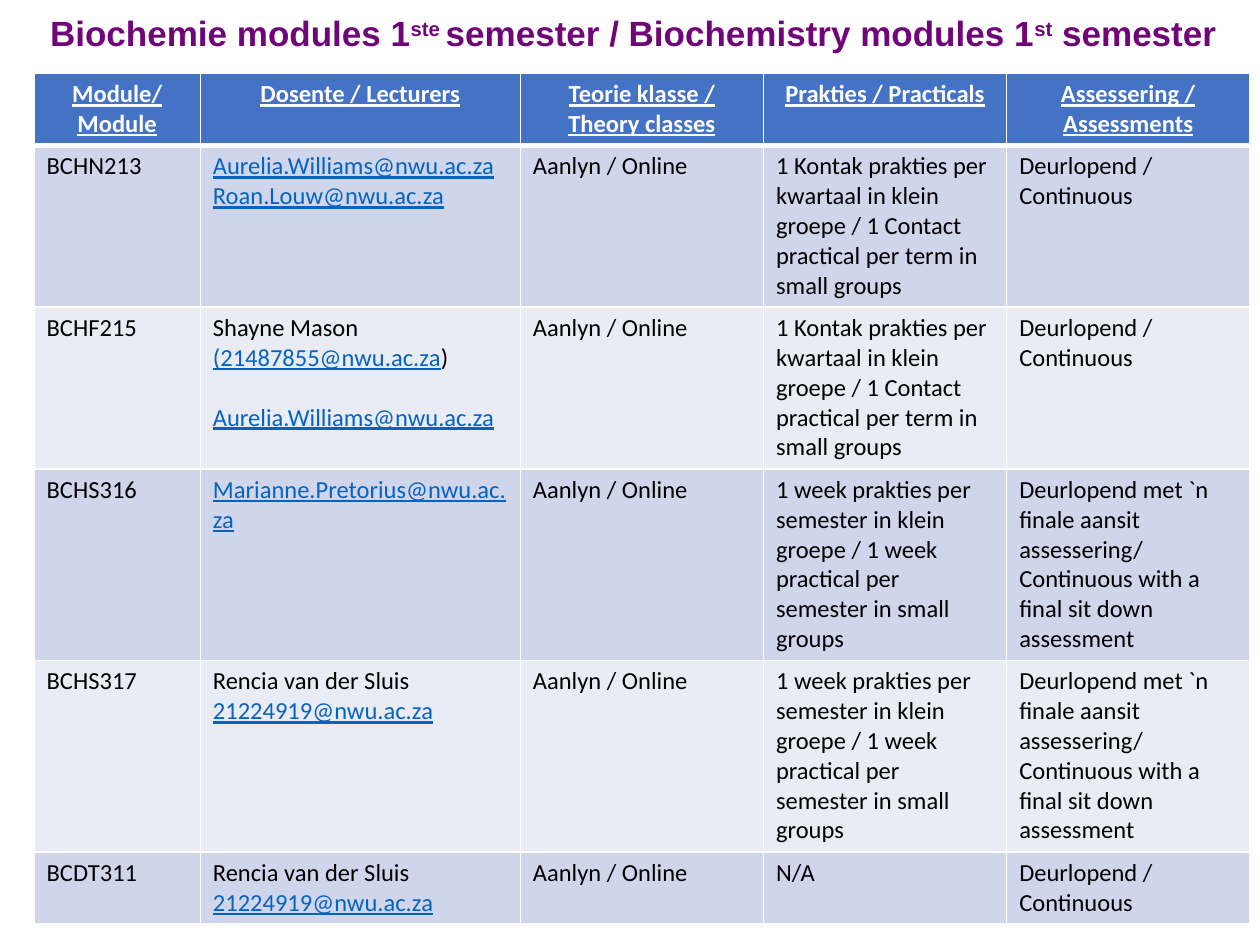
from lxml import etree
from pptx import Presentation
from pptx.dml.color import RGBColor
from pptx.enum import text
from pptx.oxml import ns
from pptx.util import Inches, Pt

PURPLE = RGBColor(0x6F, 0x05, 0x79)
BLUE = RGBColor(0x44, 0x72, 0xC4)
BAND_DARK = RGBColor(0xCF, 0xD5, 0xEA)
BAND_LIGHT = RGBColor(0xE9, 0xEB, 0xF5)
LINK = RGBColor(0x05, 0x63, 0xC1)
BLACK = RGBColor(0, 0, 0)
WHITE = RGBColor(0xFF, 0xFF, 0xFF)

ONLINE = "Aanlyn / Online"
CONTINUOUS = "Deurlopend / Continuous"
FINAL = ("Deurlopend met `n finale aansit assessering/ "
         "Continuous with a final sit down assessment")
PER_TERM = ("1 Kontak prakties per kwartaal in klein groepe / "
            "1 Contact practical per term in small groups")
ONE_WEEK = ("1 week prakties per semester in klein groepe / "
            "1 week practical per semester in small groups")
VAN_DER_SLUIS = [["Rencia van der Sluis"], ["21224919@nwu.ac.za"]]

TITLE = ["Biochemie modules 1", "ste ", "semester / Biochemistry modules 1",
         "st", " semester"]
HEADINGS = ["Module/ Module", "Dosente / Lecturers",
            "Teorie klasse / Theory classes", "Prakties / Practicals",
            "Assessering / Assessments"]
# Module, lecturers (paragraphs of runs), practicals, assessments
MODULES = [
    ("BCHN213", [["Aurelia.Williams@nwu.ac.za"], ["Roan.Louw@nwu.ac.za"]],
     PER_TERM, CONTINUOUS),
    ("BCHF215", [["Shayne Mason"], ["(21487855@nwu.ac.za", ")"],
                 ["Aurelia.Williams@nwu.ac.za"]],
     PER_TERM, CONTINUOUS),
    ("BCHS316", [["Marianne.Pretorius@nwu.ac.za"]], ONE_WEEK, FINAL),
    ("BCHS317", VAN_DER_SLUIS, ONE_WEEK, FINAL),
    ("BCDT311", VAN_DER_SLUIS, "N/A", CONTINUOUS),
]


def write(frame, paragraphs, size=14, font="Calibri", color=BLACK, bold=False,
          underline=False, align=text.PP_ALIGN.LEFT, spacing=None, raised=()):
    """Fill a frame with paragraphs of runs; e-mail addresses look like links."""
    for i, runs in enumerate(paragraphs):
        paragraph = frame.paragraphs[0] if i == 0 else frame.add_paragraph()
        paragraph.alignment = align
        if spacing:
            paragraph.line_spacing = spacing
        for words in runs:
            run = paragraph.add_run()
            run.text = words
            is_link = "@" in words
            run.font.name, run.font.size, run.font.bold = font, Pt(size), bold
            run.font.underline = underline or is_link
            run.font.color.rgb = LINK if is_link else color
            if words in raised:
                run._r.get_or_add_rPr().set("baseline", "30000")


def set_borders(cell, bottom=1):
    """Draw white lines around a cell."""
    properties = cell._tc.get_or_add_tcPr()
    sides = {"lnL": 1, "lnR": 1, "lnT": 1, "lnB": bottom}
    for i, (side, width) in enumerate(sides.items()):
        line = etree.Element(ns.qn("a:" + side), w=str(Pt(width)))
        fill = etree.SubElement(line, ns.qn("a:solidFill"))
        etree.SubElement(fill, ns.qn("a:srgbClr"), val=str(WHITE))
        properties.insert(i, line)


def add_title(slide, left, top, width, height):
    title = slide.shapes.title
    title.left, title.top, title.width, title.height = left, top, width, height
    frame = title.text_frame
    frame.word_wrap = True
    frame.auto_size = text.MSO_AUTO_SIZE.NONE
    frame.vertical_anchor = text.MSO_ANCHOR.TOP
    write(frame, [TITLE], size=20, font="Arial", color=PURPLE, bold=True,
          align=text.PP_ALIGN.CENTER, spacing=0.9, raised=("ste ", "st"))


def add_module_table(slide, left, top, width, height):
    holder = slide.shapes.add_table(len(MODULES) + 1, len(HEADINGS),
                                    left, top, width, height)
    table = holder.table
    for column, inches in zip(table.columns, [1.32, 2.54, 1.93, 1.93, 1.93]):
        column.width = Inches(inches)
    # Rows grow with their text
    for row in table.rows:
        row.height = Inches(0.41)
    holder.height = height

    # Header row
    for cell, heading in zip(table.rows[0].cells, HEADINGS):
        cell.fill.solid()
        cell.fill.fore_color.rgb = BLUE
        set_borders(cell, bottom=3)
        write(cell.text_frame, [[heading]], color=WHITE, bold=True,
              underline=True, align=text.PP_ALIGN.CENTER)

    # Module rows in alternating bands
    for r, (module, lecturers, practicals, assessments) in enumerate(MODULES, 1):
        contents = [[[module]], lecturers, [[ONLINE]], [[practicals]],
                    [[assessments]]]
        for cell, paragraphs in zip(table.rows[r].cells, contents):
            cell.fill.solid()
            cell.fill.fore_color.rgb = BAND_DARK if r % 2 else BAND_LIGHT
            set_borders(cell)
            write(cell.text_frame, paragraphs)

    # Set the second lecturer of BCHF215 apart
    table.cell(2, 1).text_frame.paragraphs[-1].space_before = Pt(17)


def main():
    deck = Presentation()
    deck.slide_width, deck.slide_height = Inches(10), Inches(7.5)
    slide = deck.slides.add_slide(deck.slide_layouts[5])
    add_title(slide, Inches(0.12), Inches(0.08), Inches(9.81), Inches(0.98))
    add_module_table(slide, Inches(0.27), Inches(0.58), Inches(9.65), Inches(6.67))
    deck.save("out.pptx")


if __name__ == "__main__":
    main()
